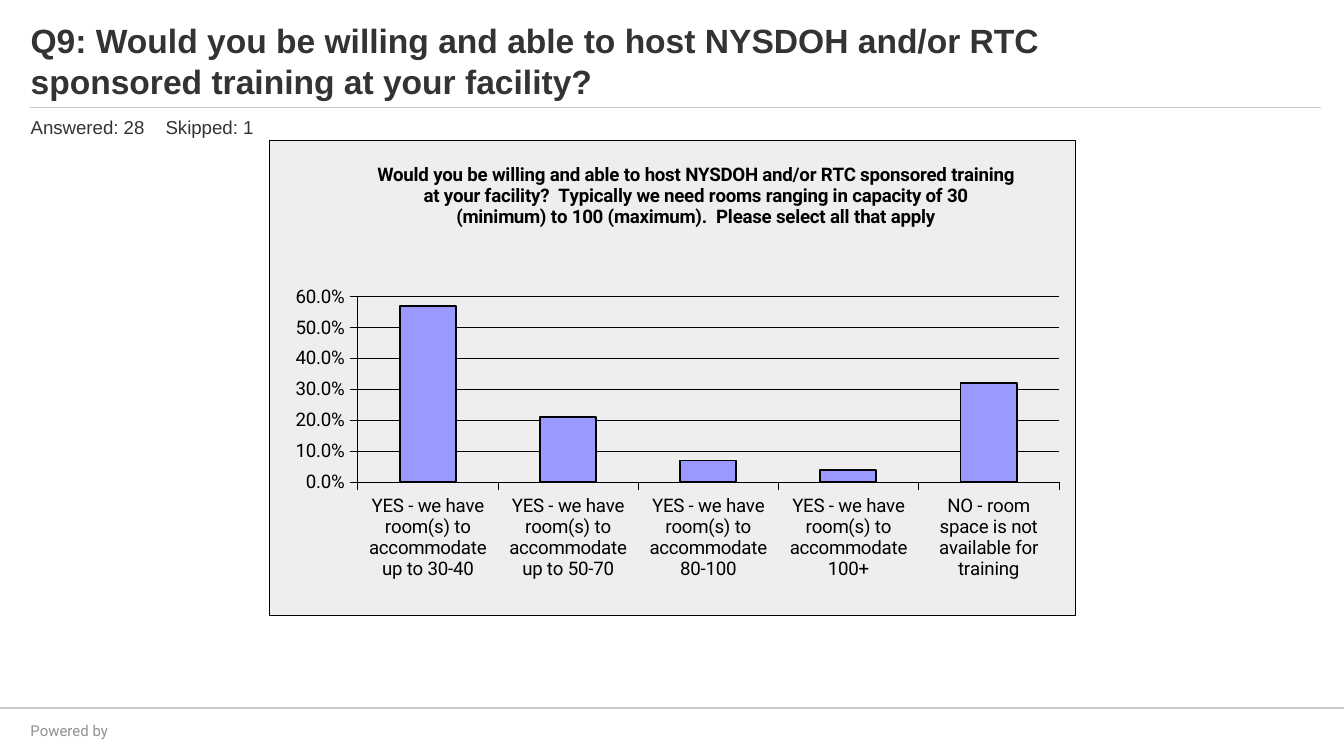
from lxml import etree
from pptx import Presentation
from pptx.chart.data import CategoryChartData
from pptx.dml.color import RGBColor
from pptx.enum.chart import XL_CHART_TYPE, XL_TICK_MARK
from pptx.enum.shapes import MSO_CONNECTOR
from pptx.enum.text import MSO_ANCHOR, PP_ALIGN
from pptx.oxml.ns import qn
from pptx.util import Cm, Pt

COLUMNS = XL_CHART_TYPE.COLUMN_CLUSTERED
TICK_OUT, TICK_NONE = XL_TICK_MARK.OUTSIDE, XL_TICK_MARK.NONE
STRAIGHT = MSO_CONNECTOR.STRAIGHT
TOP, BOTTOM = MSO_ANCHOR.TOP, MSO_ANCHOR.BOTTOM
LEFT, CENTER = PP_ALIGN.LEFT, PP_ALIGN.CENTER

QUESTION = ("Q9: Would you be willing and able to host NYSDOH and/or RTC "
            "sponsored training at your facility?")
RESPONSES = "Answered: 28\tSkipped: 1"
FOOTER = "Powered by"
CHART_TITLE = ("Would you be willing and able to host NYSDOH and/or RTC sponsored "
               "training at your facility?  Typically we need rooms ranging in "
               "capacity of 30 (minimum) to 100 (maximum).  Please select all that apply")
ANSWERS = [
    ("YES - we have room(s) to accommodate up to 30-40", 0.57),
    ("YES - we have room(s) to accommodate up to 50-70", 0.21),
    ("YES - we have room(s) to accommodate 80-100", 0.07),
    ("YES - we have room(s) to accommodate 100+", 0.04),
    ("NO - room space is not available for training", 0.32),
]
INK, DARK, MUTED, RULE = "000000", "333333", "909090", "CCCCCC"
PANEL, BAR = "EEEEEE", "9999FF"


def rgb(color):
    return RGBColor.from_string(color)


def style_font(font, name, size, color, bold=False):
    font.name, font.size, font.bold = name, Pt(size), bold
    font.color.rgb = rgb(color)


def style_line(line, color, width):
    line.color.rgb = rgb(color)
    line.width = Pt(width)


def add_text(slide, box, text, name, size, color, bold=False, align=LEFT, anchor=TOP):
    frame = slide.shapes.add_textbox(*map(Cm, box)).text_frame
    frame.word_wrap = True
    frame.vertical_anchor = anchor
    paragraph = frame.paragraphs[0]
    paragraph.alignment = align
    run = paragraph.add_run()
    run.text = text
    style_font(run.font, name, size, color, bold)
    return paragraph


def add_rule(slide, left, right, y, width):
    rule = slide.shapes.add_connector(STRAIGHT, Cm(left), Cm(y), Cm(right), Cm(y))
    style_line(rule.line, RULE, width)
    etree.SubElement(rule._element.spPr, qn("a:effectLst"))


def add_tab_stop(paragraph, position):
    tabs = etree.SubElement(paragraph._p.get_or_add_pPr(), qn("a:tabLst"))
    etree.SubElement(tabs, qn("a:tab"), pos=str(Cm(position)), algn="l")


def set_layout(parent, before, **settings):
    """Place a chart part by fractions of the chart, ahead of the element `before`."""
    for old in parent.findall(qn("c:layout")):
        parent.remove(old)
    layout = etree.Element(qn("c:layout"))
    manual = etree.SubElement(layout, qn("c:manualLayout"))
    for tag, value in settings.items():
        etree.SubElement(manual, qn("c:" + tag), val=str(value))
    parent.find(qn(before)).addprevious(layout)


def paint_area(parent, before, fill, border=None):
    """Fill a chart area, ahead of the element `before` or at the end."""
    area = etree.Element(qn("c:spPr"))
    solid = etree.SubElement(area, qn("a:solidFill"))
    etree.SubElement(solid, qn("a:srgbClr"), val=fill)
    line = etree.SubElement(area, qn("a:ln"), w=str(Pt(0.25)))
    if border:
        solid = etree.SubElement(line, qn("a:solidFill"))
        etree.SubElement(solid, qn("a:srgbClr"), val=border)
    else:
        etree.SubElement(line, qn("a:noFill"))
    if before:
        parent.find(qn(before)).addprevious(area)
    else:
        parent.append(area)


def add_answer_chart(slide):
    data = CategoryChartData(number_format="0.0%")
    data.categories = [answer for answer, _ in ANSWERS]
    data.add_series("Series 1", [share for _, share in ANSWERS])
    box = map(Cm, (5.08, 2.64, 15.24, 8.99))
    chart = slide.shapes.add_chart(COLUMNS, *box, data).chart
    style_font(chart.font, "Roboto", 10, INK)
    chart.has_legend = False

    title = chart.chart_title
    run = title.text_frame.paragraphs[0].add_run()
    run.text = CHART_TITLE
    style_font(run.font, "Roboto", 10, INK, bold=True)
    title.include_in_layout = False
    set_layout(title._element, "c:overlay", xMode="edge", yMode="edge", x=0.13, y=0.04)

    for axis in (chart.category_axis, chart.value_axis):
        axis.major_tick_mark, axis.minor_tick_mark = TICK_OUT, TICK_NONE
        style_font(axis.tick_labels.font, "Roboto", 10, INK)
        style_line(axis.format.line, INK, 0.25)
    shares = chart.value_axis
    shares.minimum_scale, shares.maximum_scale, shares.major_unit = 0, 0.6, 0.1
    shares.tick_labels.number_format = "0.0%"
    shares.tick_labels.number_format_is_linked = False
    style_line(shares.major_gridlines.format.line, INK, 0.25)

    plot = chart.plots[0]
    plot.gap_width = 150
    plot.vary_by_categories = False
    bars = plot.series[0].format
    bars.fill.solid()
    bars.fill.fore_color.rgb = rgb(BAR)
    style_line(bars.line, INK, 1)

    space = chart._chartSpace
    plot_area = space.chart.plotArea
    set_layout(plot_area, "c:barChart", layoutTarget="inner", xMode="edge", yMode="edge",
               x=0.11, y=0.33, w=0.87, h=0.39)
    paint_area(plot_area, None, PANEL)
    paint_area(space, "c:txPr", PANEL, INK)


def main():
    deck = Presentation()
    deck.slide_width, deck.slide_height = Cm(25.4), Cm(14.28)
    slide = deck.slides.add_slide(deck.slide_layouts[6])

    add_rule(slide, 0, 25.4, 13.38, 1)
    add_text(slide, (-0.15, 13.51, 2.92, 0.46), FOOTER, "Roboto", 8, MUTED, align=CENTER)
    add_rule(slide, 0.56, 24.97, 2.03, 0.5)
    add_text(slide, (0.33, 0.23, 22.86, 1.8), QUESTION, "Arial", 18, DARK,
             bold=True, anchor=BOTTOM)
    responses = add_text(slide, (0.33, 2.06, 14.81, 0.69), RESPONSES, "Arial", 10, DARK)
    add_tab_stop(responses, 2.55)
    add_answer_chart(slide)

    deck.save("out.pptx")


if __name__ == "__main__":
    main()
